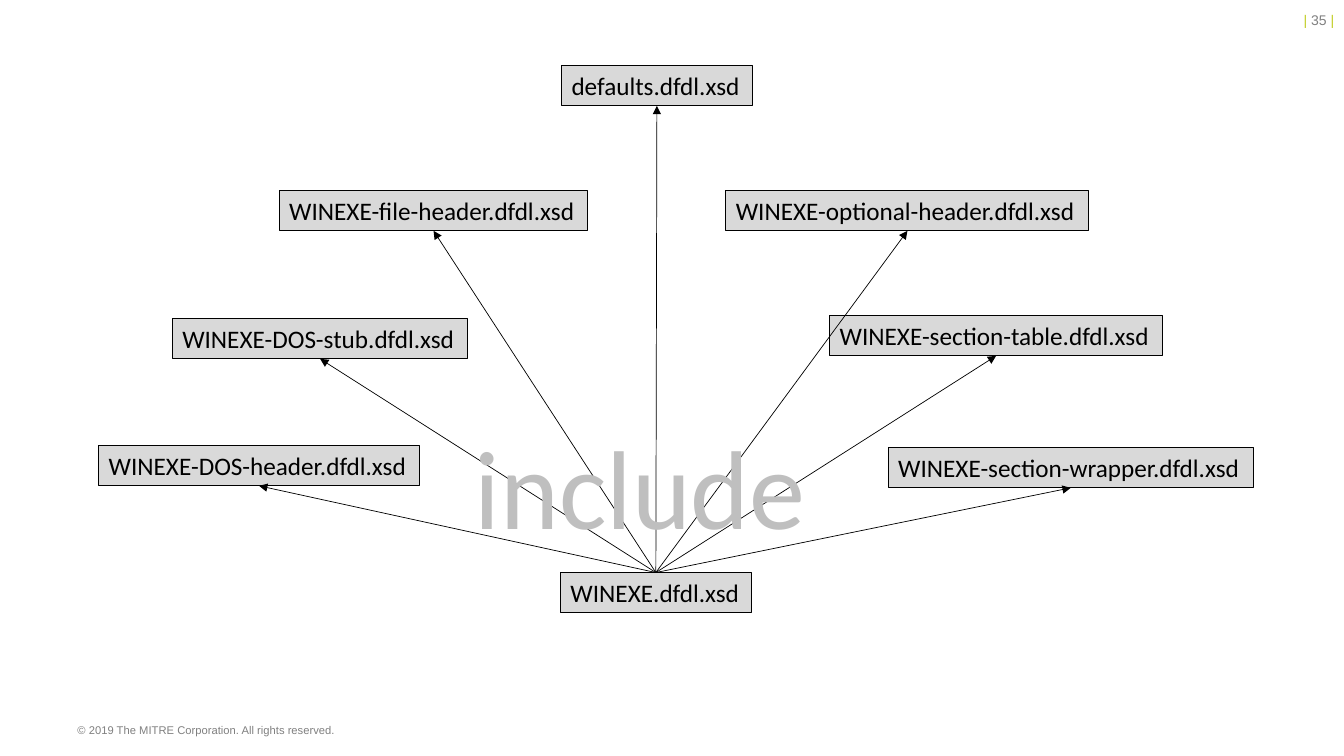
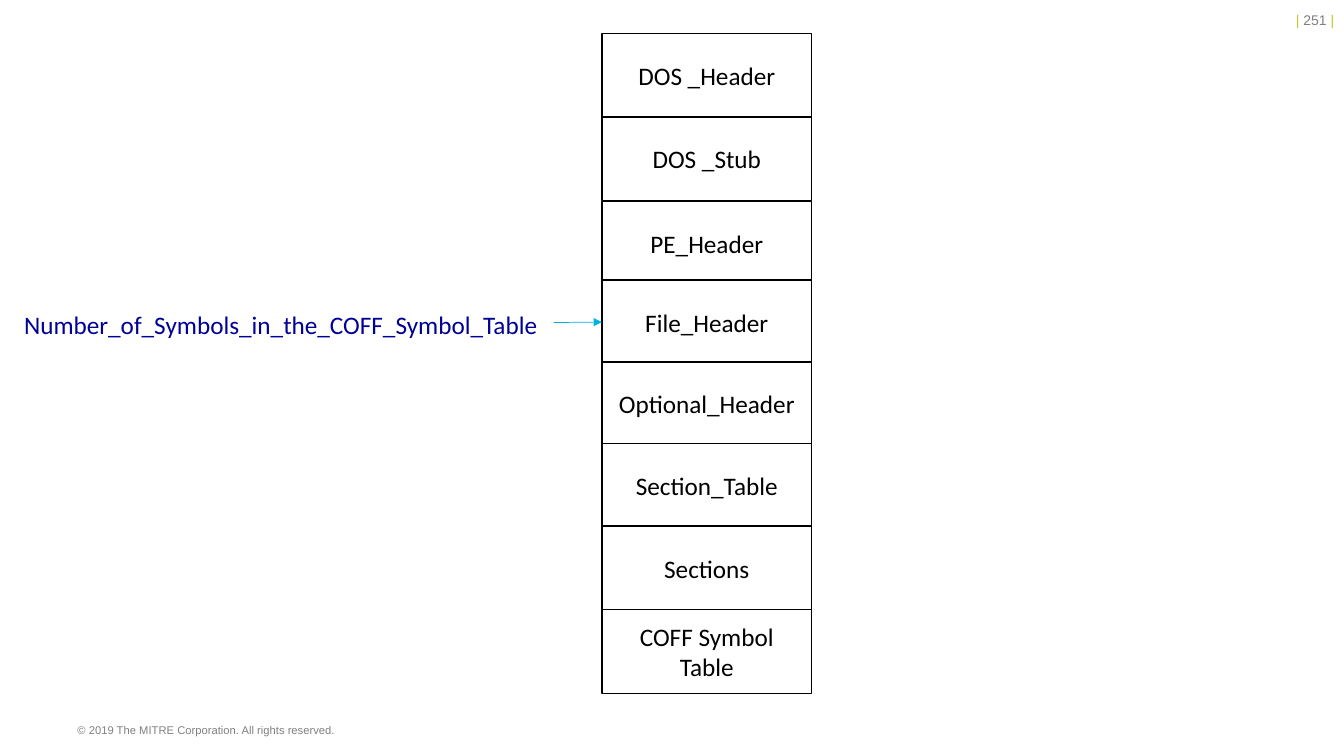
from lxml import etree
from pptx import Presentation
from pptx import util as u
from pptx.dml.color import RGBColor
from pptx.enum import shapes, text
from pptx.oxml import ns

BLACK = RGBColor(0x00, 0x00, 0x00)
WHITE = RGBColor(0xFF, 0xFF, 0xFF)
BOX_GRAY = RGBColor(0xD9, 0xD9, 0xD9)
PALE_GRAY = RGBColor(0xBF, 0xBF, 0xBF)
FOOTER_GRAY = RGBColor(0x80, 0x80, 0x80)
LIME = RGBColor(0xC1, 0xCD, 0x23)
NAVY = RGBColor(0x00, 0x00, 0x96)
CYAN = RGBColor(0x00, 0xB3, 0xDC)

BODY = {"name": "Calibri", "size": u.Pt(18)}
PAGE_NUMBER = {"name": "Arial", "size": u.Pt(10)}
FOOTER = {"name": "Arial", "size": u.Pt(8)}
COPYRIGHT = "© 2019 The MITRE Corporation. All rights reserved."

BOX_HEIGHT = 0.4
MAIN_SCHEMA = ("WINEXE.dfdl.xsd", 5.56, 5.68, 1.89)
INCLUDED_SCHEMAS = [
    ("defaults.dfdl.xsd", 5.57, 0.65, 1.89),
    ("WINEXE-DOS-stub.dfdl.xsd", 1.71, 3.16, 2.93),
    ("WINEXE-DOS-header.dfdl.xsd", 0.98, 4.42, 3.18),
    ("WINEXE-file-header.dfdl.xsd", 2.77, 1.89, 3.06),
    ("WINEXE-optional-header.dfdl.xsd", 7.2, 1.89, 3.6),
    ("WINEXE-section-table.dfdl.xsd", 8.23, 3.13, 3.3),
    ("WINEXE-section-wrapper.dfdl.xsd", 8.81, 4.44, 3.62),
]

STACK_LEFT, STACK_WIDTH, PART_HEIGHT = 5.97, 2.08, 0.83
FILE_PARTS = [
    (["DOS _Header"], 0.33),
    (["DOS _Stub"], 1.16),
    (["PE_Header"], 2),
    (["File_Header"], 2.78),
    (["Optional_Header"], 3.59),
    (["Section_Table"], 4.4),
    (["Sections"], 5.22),
    (["COFF Symbol", "Table"], 6.05),
]
POINTED_PART = 3
FIELD_NAME = "Number_of_Symbols_in_the_COFF_Symbol_Table"

TOP, LEFT, BOTTOM = 0, 1, 2


def write(shape, paragraphs, style, align=text.PP_ALIGN.LEFT, wrap=True,
          anchor=text.MSO_ANCHOR.TOP):
    frame = shape.text_frame
    frame.word_wrap = wrap
    frame.vertical_anchor = anchor
    for index, runs in enumerate(paragraphs):
        paragraph = frame.paragraphs[0] if index == 0 else frame.add_paragraph()
        paragraph.alignment = align
        for words, color in runs:
            run = paragraph.add_run()
            run.text = words
            for key, value in style.items():
                setattr(run.font, key, value)
            run.font.color.rgb = color


def add_text(slide, place, runs, style, **options):
    shape = slide.shapes.add_textbox(*map(u.Inches, place))
    write(shape, [runs], style, **options)


def add_box(slide, place, lines, fill, line_width, **options):
    shape = slide.shapes.add_shape(shapes.MSO_SHAPE.RECTANGLE, *map(u.Inches, place))
    shape.shadow.inherit = False
    shape.fill.solid()
    shape.fill.fore_color.rgb = fill
    shape.line.color.rgb = BLACK
    shape.line.width = u.Pt(line_width)
    write(shape, [[(line, BLACK)] for line in lines], BODY, **options)
    return shape


def add_arrow(slide, start, target, site, color):
    arrow = slide.shapes.add_connector(
        shapes.MSO_CONNECTOR.STRAIGHT, *map(u.Inches, start + start))
    arrow.end_connect(target, site)
    arrow.line.color.rgb = color
    arrow.line.width = u.Pt(0.5)
    etree.SubElement(arrow.line._get_or_add_ln(), ns.qn("a:tailEnd"), type="triangle")
    etree.SubElement(arrow._element.spPr, ns.qn("a:effectLst"))
    return arrow


def add_slide(presentation, number):
    slide = presentation.slides.add_slide(presentation.slide_layouts[6])
    add_text(slide, (10.99, 0.07, 2.34, 0.27),
             [("| ", LIME), (f"{number} ", FOOTER_GRAY), ("|", LIME)],
             PAGE_NUMBER, align=text.PP_ALIGN.RIGHT)
    add_text(slide, (0.67, 7.13, 8.24, 0.26), [(COPYRIGHT, FOOTER_GRAY)], FOOTER)
    return slide


def build_include_map(presentation):
    slide = add_slide(presentation, 35)
    main, *included = [
        add_box(slide, (left, top, width, BOX_HEIGHT), [name], BOX_GRAY, 0.75, wrap=False)
        for name, left, top, width in [MAIN_SCHEMA] + INCLUDED_SCHEMAS
    ]
    for schema in included:
        arrow = add_arrow(slide, (6.5, 5.68), schema, BOTTOM, BLACK)
        arrow.begin_connect(main, TOP)
    add_text(slide, (4.61, 4.09, 3.52, 1.45), [("include", PALE_GRAY)],
             {**BODY, "size": u.Pt(80)}, wrap=False)


def build_file_layout(presentation):
    slide = add_slide(presentation, 251)
    parts = [
        add_box(slide, (STACK_LEFT, top, STACK_WIDTH, PART_HEIGHT), lines, WHITE, 1,
                align=text.PP_ALIGN.CENTER, anchor=text.MSO_ANCHOR.MIDDLE)
        for lines, top in FILE_PARTS
    ]
    add_text(slide, (0.14, 3.02, 5.35, 0.4), [(FIELD_NAME, NAVY)], BODY, wrap=False)
    add_arrow(slide, (5.49, 3.2), parts[POINTED_PART], LEFT, CYAN)


def main():
    presentation = Presentation()
    presentation.slide_width = u.Inches(13.33)
    presentation.slide_height = u.Inches(7.5)
    build_include_map(presentation)
    build_file_layout(presentation)
    presentation.save("out.pptx")


if __name__ == "__main__":
    main()
